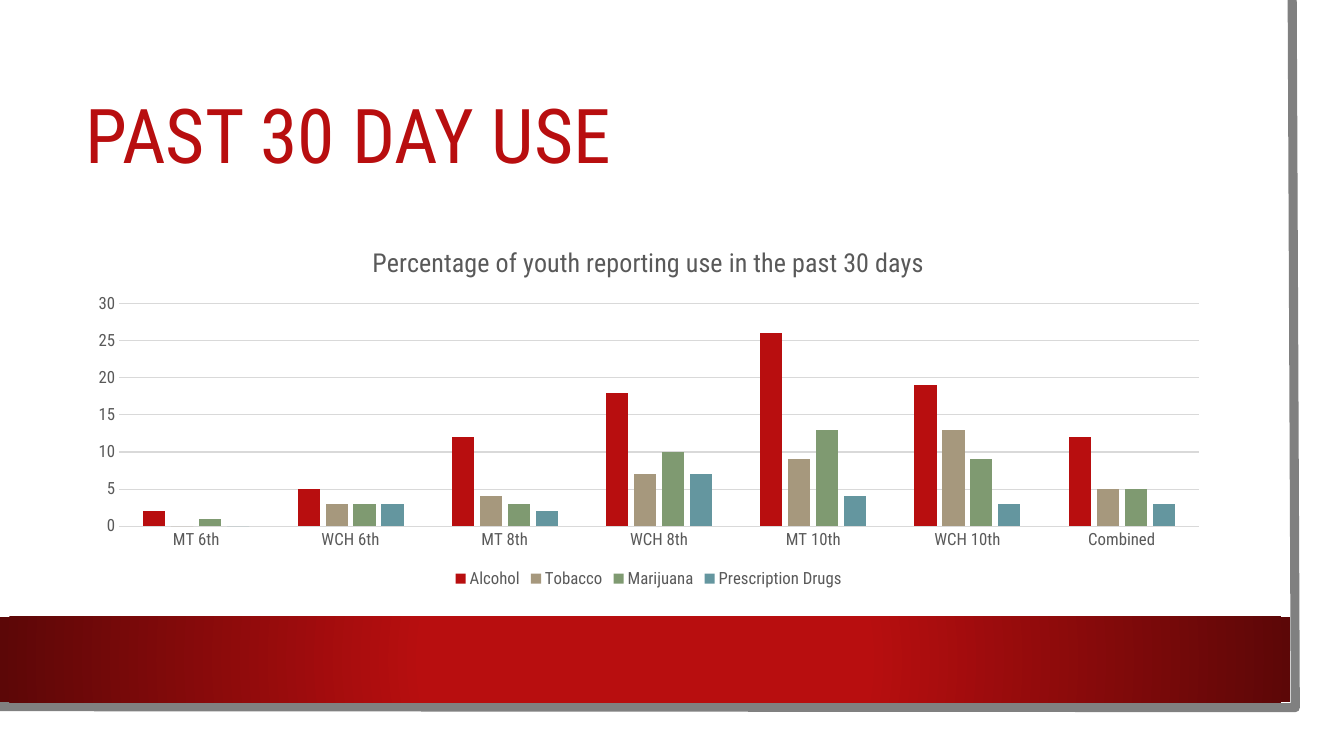
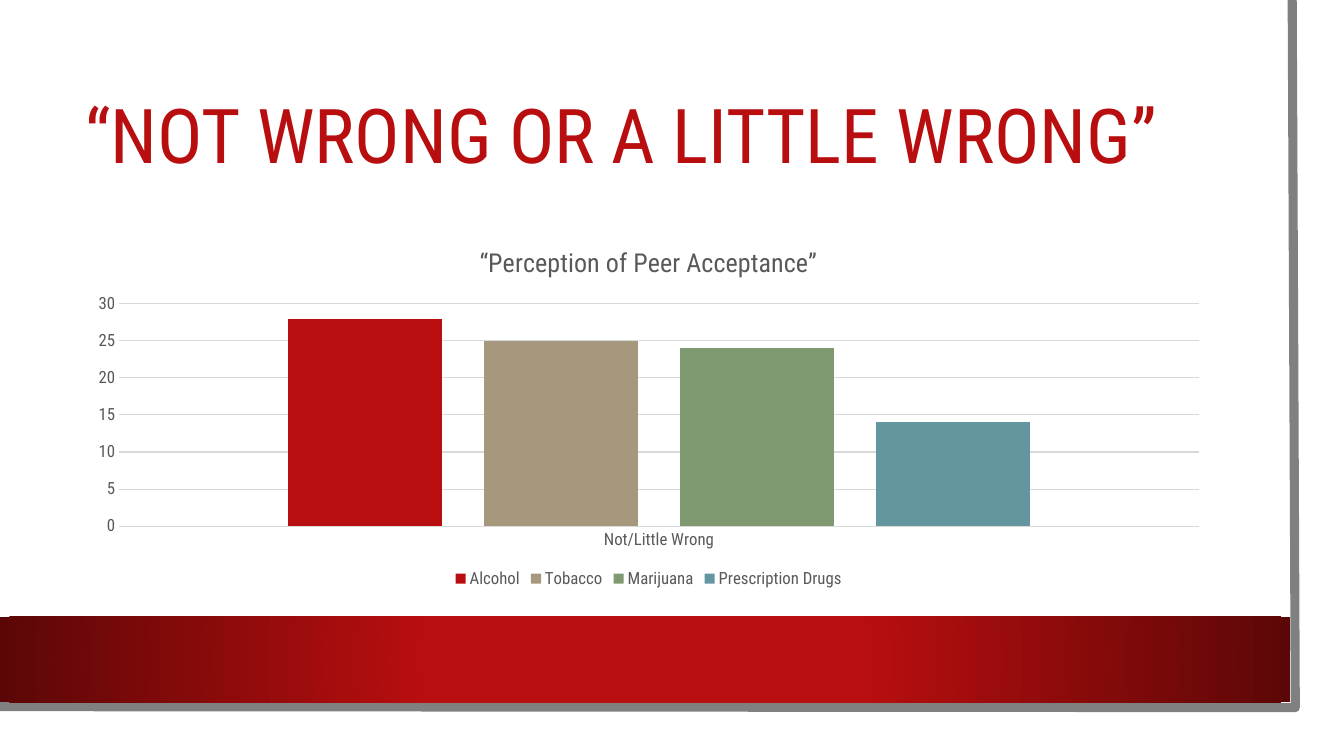
from lxml.etree import SubElement
from pptx import Presentation
from pptx.chart.data import CategoryChartData
from pptx.dml.color import RGBColor
from pptx.enum.chart import XL_CHART_TYPE as ChartType, XL_LEGEND_POSITION as LegendPosition, XL_TICK_MARK as TickMark
from pptx.enum.shapes import MSO_SHAPE as Preset
from pptx.enum.text import MSO_ANCHOR as Anchor
from pptx.oxml.ns import qn
from pptx.util import Inches, Pt

WIDTH, HEIGHT = Inches(13.33), Inches(7.5)
FONT = "Roboto Condensed"
WHITE = RGBColor(0xFF, 0xFF, 0xFF)
RED = RGBColor(0xB8, 0x0E, 0x0F)
DARK_RED = RGBColor(0x5C, 0x07, 0x07)
SAND = RGBColor(0xA6, 0x98, 0x7D)
GREEN = RGBColor(0x7F, 0x9A, 0x71)
TEAL = RGBColor(0x64, 0x96, 0x9F)
FRAME_GREY = RGBColor(0x80, 0x80, 0x80)
TEXT_GREY = RGBColor(0x59, 0x59, 0x59)
GRID_GREY = RGBColor(0xD9, 0xD9, 0xD9)

SUBSTANCES = {"Alcohol": RED, "Tobacco": SAND, "Marijuana": GREEN, "Prescription Drugs": TEAL}
LEFT, CONTENT_WIDTH = 5.63, 85.28
SLIDES = [
    ("PAST 30 DAY USE", "Percentage of youth reporting use in the past 30 days",
     ["MT 6th", "WCH 6th", "MT 8th", "WCH 8th", "MT 10th", "WCH 10th", "Combined"],
     [(2, 5, 12, 18, 26, 19, 12), (0, 3, 4, 7, 9, 13, 5), (1, 3, 3, 10, 13, 9, 5), (0, 3, 2, 7, 4, 3, 3)]),
    ("“NOT WRONG OR A LITTLE WRONG”", "“Perception of Peer Acceptance”",
     ["Not/Little Wrong"], [(28,), (25,), (24,), (14,)]),
]


def across(percent):
    """Return a share of the slide's width."""
    return round(WIDTH * percent / 100)


def down(percent):
    """Return a share of the slide's height."""
    return round(HEIGHT * percent / 100)


def area(left, top, width, height):
    """Turn percentages of the slide into a position and size."""
    return across(left), down(top), across(width), down(height)


def write(paragraph, text, size, color):
    """Put one formatted run of text into a paragraph."""
    run = paragraph.add_run()
    run.text = text
    font = run.font
    font.name, font.size, font.bold = FONT, Pt(size), False
    font.color.rgb = color


def add_rectangle(slide, *box):
    """Add a rectangle without line or shadow."""
    shape = slide.shapes.add_shape(Preset.RECTANGLE, *area(*box))
    shape.shadow.inherit = False
    shape.line.fill.background()
    return shape


def fill_radial(shape, stops):
    """Fill a shape with a gradient that runs out from its centre."""
    shape.fill.gradient()
    for stop, (position, color) in zip(shape.fill.gradient_stops, stops):
        stop.position = position
        stop.color.rgb = color
    gradient = shape.element.spPr.find(qn("a:gradFill"))
    gradient.remove(gradient.find(qn("a:lin")))
    circle = SubElement(gradient, qn("a:path"), {"path": "circle"})
    SubElement(circle, qn("a:fillToRect"), dict.fromkeys("ltrb", "50000"))


def add_frame_edge(slide):
    """Draw the grey edge along the right and bottom of the card."""
    builder = slide.shapes.build_freeform(across(96.15), 0)
    corners = [(across(96.38), down(93.6)), (across(-0.23), down(93.47))]
    builder.add_line_segments(corners, close=False)
    edge = builder.convert_to_shape()
    edge.shadow.inherit = False
    edge.fill.background()
    edge.line.color.rgb = FRAME_GREY
    edge.line.width = Pt(6.5)


def add_background(slide):
    """Add the card, its edge and the red band."""
    card = add_rectangle(slide, 0, 0, 98.25, 96.93)
    card.fill.solid()
    card.fill.fore_color.rgb = WHITE
    add_frame_edge(slide)
    band = add_rectangle(slide, 0, 81.6, 96, 11.33)
    fill_radial(band, [(0.34, RED), (1, DARK_RED)])


def add_title(slide, text):
    """Add the slide title."""
    frame = slide.shapes.add_textbox(*area(LEFT, 10, CONTENT_WIDTH, 16.8)).text_frame
    frame.word_wrap = True
    frame.vertical_anchor = Anchor.MIDDLE
    paragraph = frame.paragraphs[0]
    paragraph.line_spacing = 0.9
    write(paragraph, text, 54, RED)


def style_axes(chart):
    """Give both axes their scale, lines and gridlines."""
    category_axis, value_axis = chart.category_axis, chart.value_axis
    for axis in (category_axis, value_axis):
        axis.major_tick_mark = axis.minor_tick_mark = TickMark.NONE
    value_axis.minimum_scale, value_axis.maximum_scale, value_axis.major_unit = 0, 30, 5
    value_axis.format.line.fill.background()
    for line in (category_axis.format.line, value_axis.major_gridlines.format.line):
        line.color.rgb = GRID_GREY
        line.width = Pt(0.75)


def add_column_chart(slide, heading, categories, rows):
    """Add a clustered column chart with one series per substance."""
    data = CategoryChartData()
    data.categories = categories
    for name, values in zip(SUBSTANCES, rows):
        data.add_series(name, values)
    box = area(LEFT, 30.13, CONTENT_WIDTH, 48.27)
    chart = slide.shapes.add_chart(ChartType.COLUMN_CLUSTERED, *box, data).chart
    chart.font.name, chart.font.size = FONT, Pt(12)
    chart.font.color.rgb = TEXT_GREY
    chart.has_title = True
    write(chart.chart_title.text_frame.paragraphs[0], heading, 18.6, TEXT_GREY)
    chart.has_legend = True
    chart.legend.position = LegendPosition.BOTTOM
    chart.legend.include_in_layout = False
    style_axes(chart)
    plot = chart.plots[0]
    plot.vary_by_categories = False
    plot.gap_width, plot.overlap = 219, -27
    for series, color in zip(plot.series, SUBSTANCES.values()):
        series.format.fill.solid()
        series.format.fill.fore_color.rgb = color


def main():
    """Build the presentation."""
    presentation = Presentation()
    presentation.slide_width, presentation.slide_height = WIDTH, HEIGHT
    for title, heading, categories, rows in SLIDES:
        slide = presentation.slides.add_slide(presentation.slide_layouts[6])
        add_background(slide)
        add_title(slide, title)
        add_column_chart(slide, heading, categories, rows)
    presentation.save("out.pptx")


if __name__ == "__main__":
    main()
